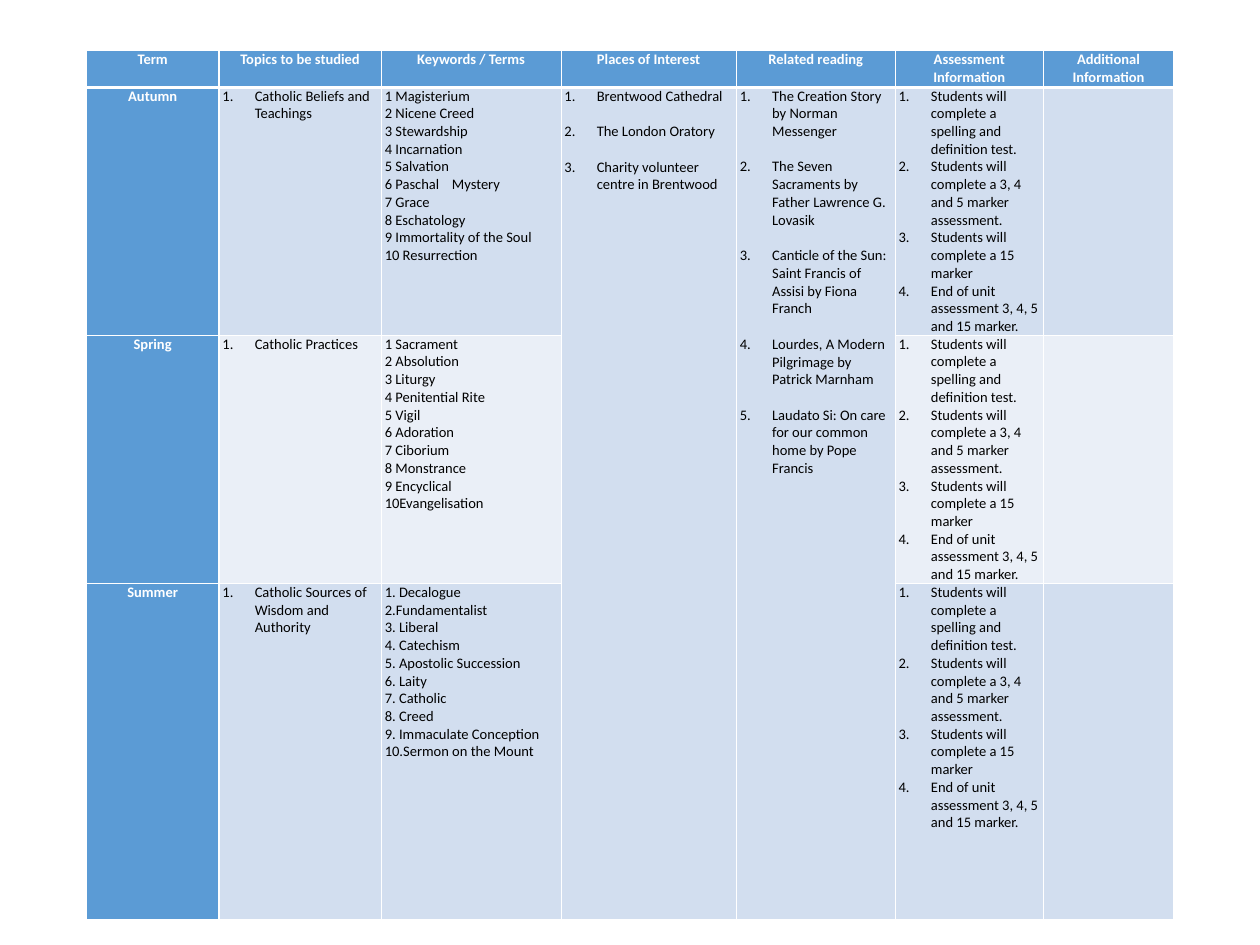
from dataclasses import dataclass

from lxml.etree import SubElement
from pptx import Presentation
from pptx.dml.color import RGBColor as Color
from pptx.enum.text import PP_ALIGN as Align
from pptx.oxml.ns import qn
from pptx.util import Inches, Pt

# Content
HEADINGS = ["Term", "Topics to be studied", "Keywords / Terms", "Places of Interest",
            "Related reading", "Assessment Information", "Additional Information"]
TERMS = [
    ("Autumn", "Catholic Beliefs and Teachings",
     ["1 Magisterium", "2 Nicene Creed", "3 Stewardship", "4 Incarnation", "5 Salvation",
      "6 Paschal\tMystery", "7 Grace", "8 Eschatology", "9 Immortality of the Soul",
      "10 Resurrection"]),
    ("Spring", "Catholic Practices",
     ["1 Sacrament", "2 Absolution", "3 Liturgy", "4 Penitential Rite", "5 Vigil",
      "6 Adoration", "7 Ciborium", "8 Monstrance", "9 Encyclical", "10Evangelisation"]),
    ("Summer", "Catholic Sources of Wisdom and Authority",
     ["1. Decalogue", "2.Fundamentalist", "3. Liberal", "4. Catechism",
      "5. Apostolic Succession", "6. Laity", "7. Catholic", "8. Creed",
      "9. Immaculate Conception", "10.Sermon on the Mount"]),
]
PLACES = ["Brentwood Cathedral", "The London Oratory", "Charity volunteer centre in Brentwood"]
READING = [
    "The Creation Story by Norman Messenger",
    "The Seven Sacraments by Father Lawrence G. Lovasik",
    "Canticle of the Sun: Saint Francis of Assisi by Fiona Franch",
    "Lourdes, A Modern Pilgrimage by Patrick Marnham",
    "Laudato Si: On care for our common home by Pope Francis",
]
ASSESSMENTS = [
    "Students will complete a spelling and definition test.",
    "Students will complete a 3, 4 and 5 marker assessment.",
    "Students will complete a 15 marker",
    "End of unit assessment 3, 4, 5 and 15 marker.",
]

# Layout in inches
LEFT, TOP = 0.99, 0.58
COLUMN_WIDTHS = [1.52, 1.86, 2.06, 2.01, 1.82, 1.7, 1.49]
ROW_HEIGHTS = [0.42, 2.58, 2.58, 3.85]
SIDE_MARGIN, LIST_INDENT, KEYWORD_TAB = 0.04, 0.37, 0.77
PLACES_COLUMN, READING_COLUMN = 3, 4


@dataclass(frozen=True)
class Theme:
    font: str = "Calibri"
    size: float = 12
    list_gap: float = 14.65
    white: str = "FFFFFF"
    black: str = "000000"
    accent: str = "5B9BD5"
    bands: tuple = ("D2DEEF", "EAEFF7")
    thin: float = 1
    thick: float = 3


THEME = Theme()


def write(cell, lines, color=THEME.black, bold=False, align=Align.LEFT,
          numbered=False, gap=0):
    """Fill a cell with one paragraph per line."""
    frame = cell.text_frame
    for index, line in enumerate(lines):
        para = frame.paragraphs[0] if index == 0 else frame.add_paragraph()
        para.alignment = align
        if gap and index < len(lines) - 1:
            para.space_after = Pt(gap)
        span = para.add_run()
        span.text = line
        span.font.name, span.font.size, span.font.bold = THEME.font, Pt(THEME.size), bold
        span.font.color.rgb = Color.from_string(color)
        settings = para._p.get_or_add_pPr()
        if numbered:
            settings.set("marL", str(Inches(LIST_INDENT)))
            settings.set("indent", str(Inches(-LIST_INDENT)))
            SubElement(settings, qn("a:buAutoNum"), type="arabicPeriod")
        if "\t" in line:
            stops = SubElement(settings, qn("a:tabLst"))
            SubElement(stops, qn("a:tab"), pos=str(Inches(KEYWORD_TAB)), algn="l")


def style_cell(cell, fill, top, bottom):
    """Set margins, borders and fill."""
    cell.margin_left = cell.margin_right = Inches(SIDE_MARGIN)
    cell.margin_top = cell.margin_bottom = 0
    settings = cell._tc.get_or_add_tcPr()
    for side, width in (("L", THEME.thin), ("R", THEME.thin), ("T", top), ("B", bottom)):
        line = SubElement(settings, qn(f"a:ln{side}"), w=str(Pt(width)))
        SubElement(SubElement(line, qn("a:solidFill")), qn("a:srgbClr"), val=THEME.white)
    cell.fill.solid()
    cell.fill.fore_color.rgb = Color.from_string(fill)


def add_plan(page):
    table = page.shapes.add_table(
        len(ROW_HEIGHTS), len(COLUMN_WIDTHS), Inches(LEFT), Inches(TOP),
        Inches(sum(COLUMN_WIDTHS)), Inches(sum(ROW_HEIGHTS))).table
    table.first_row = table.horz_banding = False
    for column, width in zip(table.columns, COLUMN_WIDTHS):
        column.width = Inches(width)
    for row, height in zip(table.rows, ROW_HEIGHTS):
        row.height = Inches(height)

    # Blue header row and term column, banded body
    for r in range(len(ROW_HEIGHTS)):
        for c in range(len(COLUMN_WIDTHS)):
            banded = THEME.bands[(r - 1) % 2]
            style_cell(table.cell(r, c),
                       fill=THEME.accent if r == 0 or c == 0 else banded,
                       top=THEME.thick if r == 1 else THEME.thin,
                       bottom=THEME.thick if r == 0 else THEME.thin)

    # Headings and one row per term
    label = dict(color=THEME.white, bold=True, align=Align.CENTER)
    for c, heading in enumerate(HEADINGS):
        write(table.cell(0, c), [heading], **label)
    for r, (term, topic, keywords) in enumerate(TERMS, start=1):
        write(table.cell(r, 0), [term], **label)
        write(table.cell(r, 1), [topic], numbered=True)
        write(table.cell(r, 2), keywords)
        write(table.cell(r, 5), ASSESSMENTS, numbered=True)

    # Lists shared by all terms
    for c, items in ((PLACES_COLUMN, PLACES), (READING_COLUMN, READING)):
        table.cell(1, c).merge(table.cell(len(TERMS), c))
        write(table.cell(1, c), items, numbered=True, gap=THEME.list_gap)


def main():
    deck = Presentation()
    deck.slide_width, deck.slide_height = Inches(14.44), Inches(10.83)
    page = deck.slides.add_slide(deck.slide_layouts[6])
    add_plan(page)
    deck.save("out.pptx")


if __name__ == "__main__":
    main()
